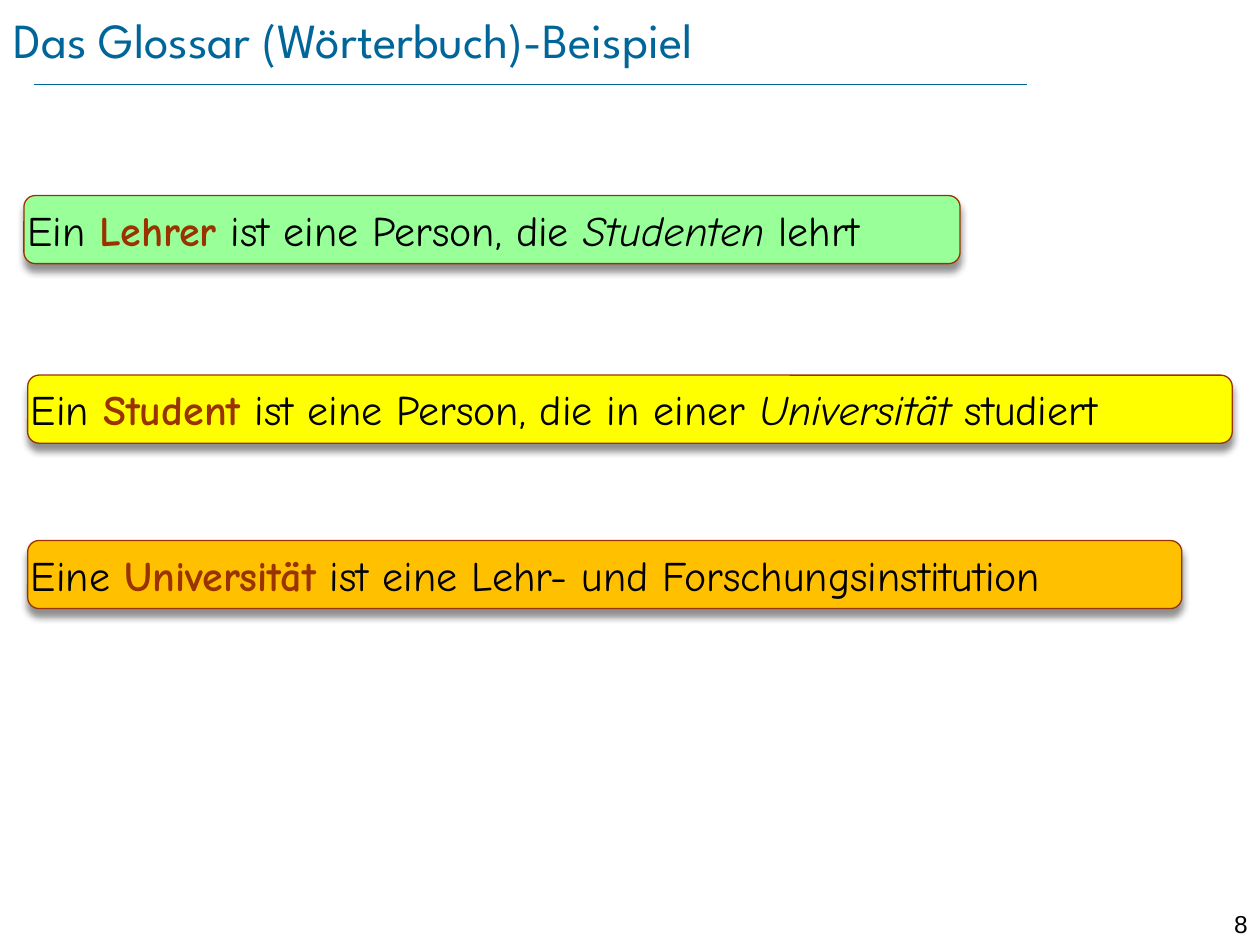
from dataclasses import dataclass

from lxml import etree
from pptx import Presentation
from pptx.dml.color import RGBColor
from pptx.enum.shapes import MSO_CONNECTOR, MSO_SHAPE
from pptx.enum.text import MSO_ANCHOR, PP_ALIGN
from pptx.oxml import parse_xml
from pptx.oxml.ns import nsdecls, qn
from pptx.util import Inches, Pt


@dataclass(frozen=True)
class Theme:
    heading: str = "006699"
    accent: str = "993300"
    ink: str = "000000"
    green: str = "99FF99"
    yellow: str = "FFFF00"
    orange: str = "FFC000"
    title_font: str = "League Spartan"
    body_font: str = "Comic Neue"
    number_font: str = "Arial"
    title_size: int = 28
    body_size: int = 24
    number_size: int = 14


THEME = Theme()

# Content: each run is (text, style)
TITLE = "Das Glossar (Wörterbuch)-Beispiel"
PAGE_NUMBER = "8"
PLAIN, TERM, REFERENCE = "plain", "term", "reference"
# Each entry: left, top, width as shares of the slide; fill; runs
ENTRIES = [
    (0.019, 0.207, 0.743, THEME.green, [
        ("Ein ", PLAIN), ("Lehrer", TERM), (" ist eine Person, die ", PLAIN),
        ("Studenten", REFERENCE), (" lehrt", PLAIN)]),
    (0.022, 0.397, 0.956, THEME.yellow, [
        ("Ein ", PLAIN), ("Student", TERM), (" ist eine Person, die in einer ", PLAIN),
        ("Universität", REFERENCE), (" studiert", PLAIN)]),
    (0.022, 0.572, 0.916, THEME.orange, [
        ("Eine ", PLAIN), ("Universität", TERM),
        (" ist eine Lehr- und Forschungsinstitution", PLAIN)]),
]
ENTRY_HEIGHT = 0.072

SHADOW = (
    f'<a:effectLst {nsdecls("a")}>'
    f'<a:outerShdw blurRad="{Pt(4)}" dist="{Pt(4)}" dir="5400000" rotWithShape="0">'
    f'<a:srgbClr val="{THEME.ink}"><a:alpha val="43000"/></a:srgbClr>'
    '</a:outerShdw></a:effectLst>'
)

presentation = Presentation()
presentation.slide_width, presentation.slide_height = Inches(10), Inches(7.5)
slide = presentation.slides.add_slide(presentation.slide_layouts[5])


def across(share):
    return int(presentation.slide_width * share)


def down(share):
    return int(presentation.slide_height * share)


def style_font(font, name, size, color):
    font.name, font.size = name, Pt(size)
    font.color.rgb = RGBColor.from_string(color)


def clear_margins(text_frame):
    text_frame.margin_left = text_frame.margin_right = 0
    text_frame.margin_top = text_frame.margin_bottom = 0
    text_frame.vertical_anchor = MSO_ANCHOR.MIDDLE
    text_frame.word_wrap = True


def add_entry(left, top, width, fill, runs):
    shape = slide.shapes.add_shape(
        MSO_SHAPE.ROUNDED_RECTANGLE,
        across(left), down(top), across(width), down(ENTRY_HEIGHT))
    shape.fill.solid()
    shape.fill.fore_color.rgb = RGBColor.from_string(fill)
    shape.line.color.rgb = RGBColor.from_string(THEME.accent)
    shape.line.width = Pt(0.75)
    shape._element.spPr.append(parse_xml(SHADOW))
    clear_margins(shape.text_frame)
    paragraph = shape.text_frame.paragraphs[0]
    paragraph.alignment = PP_ALIGN.LEFT
    for text, style in runs:
        run = paragraph.add_run()
        run.text = text
        color = THEME.accent if style == TERM else THEME.ink
        style_font(run.font, THEME.body_font, THEME.body_size, color)
        run.font.bold = style == TERM
        run.font.italic = style == REFERENCE


# Title and the rule below it
title = slide.shapes.title
title.left, title.top = across(0.011), down(0.009)
title.width, title.height = across(0.956), down(0.064)
title.text_frame.text = TITLE
clear_margins(title.text_frame)
paragraph = title.text_frame.paragraphs[0]
paragraph.alignment = PP_ALIGN.LEFT
style_font(paragraph.runs[0].font, THEME.title_font, THEME.title_size, THEME.heading)

rule = slide.shapes.add_connector(
    MSO_CONNECTOR.STRAIGHT, across(0.027), down(0.089), across(0.815), down(0.089))
rule.line.color.rgb = RGBColor.from_string(THEME.heading)
rule.line.width = Pt(0.25)
etree.SubElement(rule._element.spPr, qn("a:effectLst"))

# Glossary entries
for entry in ENTRIES:
    add_entry(*entry)

# Page number
number = slide.shapes.add_textbox(across(0.945), down(0.955), across(0.055), down(0.032))
number.text_frame.word_wrap = True
number.text_frame.text = PAGE_NUMBER
paragraph = number.text_frame.paragraphs[0]
paragraph.alignment = PP_ALIGN.RIGHT
style_font(paragraph.runs[0].font, THEME.number_font, THEME.number_size, THEME.ink)

presentation.save("out.pptx")
